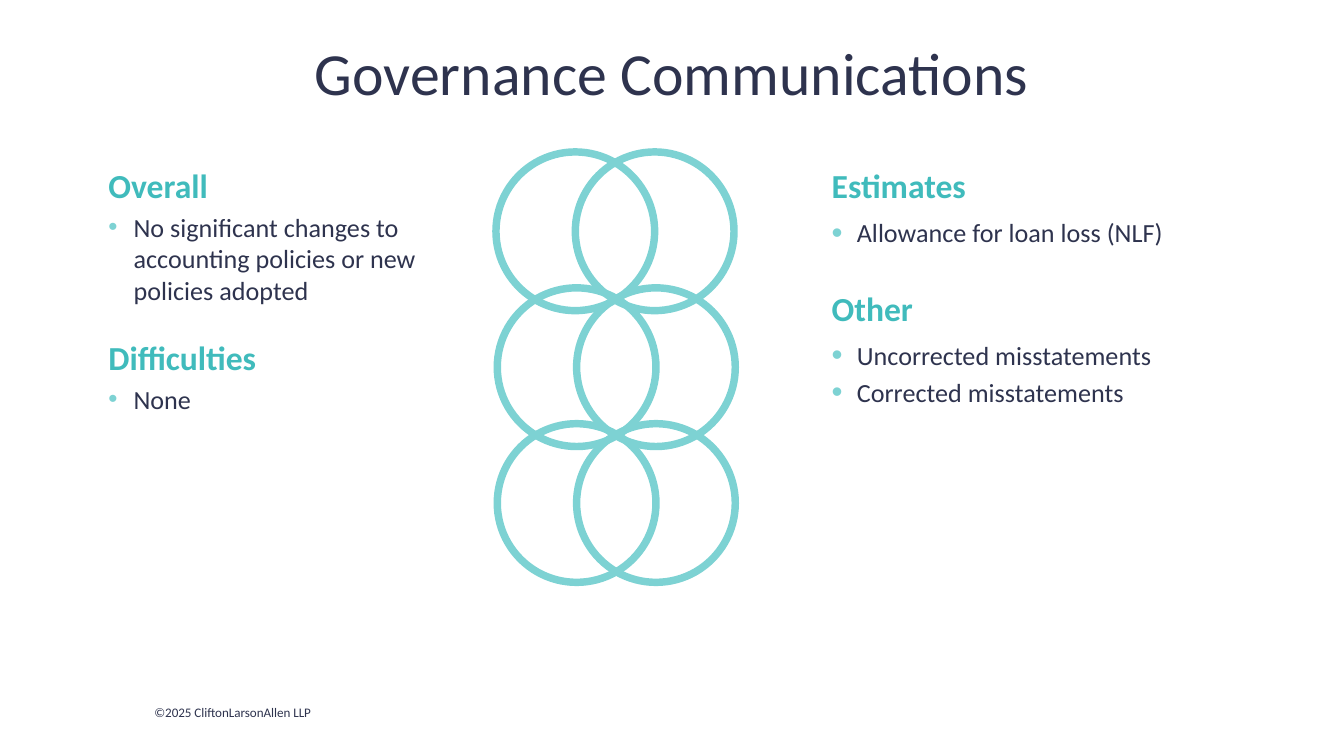
from typing import NamedTuple

from lxml import etree
from pptx import Presentation
from pptx.dml.color import RGBColor
from pptx.enum import shapes, text
from pptx.oxml import ns
from pptx.util import Pt

FONT = "Calibri"
NAVY = "2E334E"
TEAL = "40BBBC"
AQUA = "7DD2D3"
BULLET_INDENT = 13.5


class Box(NamedTuple):
    left: float
    top: float
    width: float
    height: float


class Section(NamedTuple):
    heading: str
    bullets: list[str]


class Column(NamedTuple):
    box: Box
    sections: list[Section]
    section_gap: float
    bullet_gap: float
    bullet_percent: int


COLUMNS = [
    Column(Box(438.5, 85, 252, 265), [
        Section("Estimates", ["Allowance for loan loss (NLF)"]),
        Section("Other", ["Uncorrected misstatements", "Corrected misstatements"]),
    ], section_gap=21, bullet_gap=3, bullet_percent=120),
    Column(Box(51, 85, 215.5, 158.5), [
        Section("Overall", ["No significant changes to accounting policies or new policies adopted"]),
        Section("Difficulties", ["None"]),
    ], section_gap=17, bullet_gap=0, bullet_percent=100),
]

CIRCLE_SIZE = 85
CIRCLE_TOP = 81.4
CIRCLE_ROW_LEFTS = [265.7, 266.4, 266.4]
CIRCLE_COLUMN_STEP = 42.5
CIRCLE_ROW_STEP = 72.8


def color(value: str) -> RGBColor:
    return RGBColor.from_string(value)


def lengths(box: Box) -> list[Pt]:
    return [Pt(value) for value in box]


def set_font(paragraph, size: float, value: str, bold: bool = False) -> None:
    font = paragraph.font
    font.name, font.size, font.bold = FONT, Pt(size), bold
    font.color.rgb = color(value)


def add_text_frame(slide, box: Box, anchor=text.MSO_ANCHOR.TOP):
    frame = slide.shapes.add_textbox(*lengths(box)).text_frame
    frame.word_wrap = True
    frame.vertical_anchor = anchor
    return frame


def add_line(slide, box: Box, words: str, size: float, alignment=text.PP_ALIGN.LEFT) -> None:
    """Add a vertically centred box holding one line of text."""
    paragraph = add_text_frame(slide, box, text.MSO_ANCHOR.MIDDLE).paragraphs[0]
    paragraph.text = words
    paragraph.alignment = alignment
    set_font(paragraph, size, NAVY)


def add_bullet(paragraph, percent: int) -> None:
    properties = paragraph._p.get_or_add_pPr()
    properties.set("marL", str(Pt(BULLET_INDENT)))
    properties.set("indent", str(-Pt(BULLET_INDENT)))
    bullet_color = etree.SubElement(properties, ns.qn("a:buClr"))
    etree.SubElement(bullet_color, ns.qn("a:srgbClr"), val=AQUA)
    etree.SubElement(properties, ns.qn("a:buSzPct"), val=str(percent * 1000))
    etree.SubElement(properties, ns.qn("a:buFont"), typeface="Arial")
    etree.SubElement(properties, ns.qn("a:buChar"), char="•")


def add_column(slide, column: Column) -> None:
    frame = add_text_frame(slide, column.box)
    for index, section in enumerate(column.sections):
        heading = frame.add_paragraph() if index else frame.paragraphs[0]
        heading.text = section.heading
        heading.space_before = Pt(column.section_gap if index else 0)
        heading.space_after = Pt(3)
        set_font(heading, 18, TEAL, bold=True)
        for words in section.bullets:
            bullet = frame.add_paragraph()
            bullet.text = words
            bullet.space_before = Pt(column.bullet_gap)
            add_bullet(bullet, column.bullet_percent)
            set_font(bullet, 14, NAVY)


def add_circle(slide, left: float, top: float) -> None:
    box = Box(left, top, CIRCLE_SIZE, CIRCLE_SIZE)
    circle = slide.shapes.add_shape(shapes.MSO_SHAPE.OVAL, *lengths(box))
    circle.shadow.inherit = False
    circle.fill.background()
    circle.line.color.rgb = color(AQUA)
    circle.line.width = Pt(4)


def main() -> None:
    presentation = Presentation()
    presentation.slide_width, presentation.slide_height = Pt(720), Pt(405)
    slide = presentation.slides.add_slide(presentation.slide_layouts[6])

    add_line(slide, Box(75.6, 373.7, 108.7, 15.8), "©2025 CliftonLarsonAllen LLP", 7)
    add_line(slide, Box(36, 11.5, 648, 54), "Governance Communications", 32, text.PP_ALIGN.CENTER)
    for column in COLUMNS:
        add_column(slide, column)
    for row, row_left in enumerate(CIRCLE_ROW_LEFTS):
        for position in range(2):
            add_circle(slide, row_left + position * CIRCLE_COLUMN_STEP, CIRCLE_TOP + row * CIRCLE_ROW_STEP)

    presentation.save("out.pptx")


if __name__ == "__main__":
    main()
